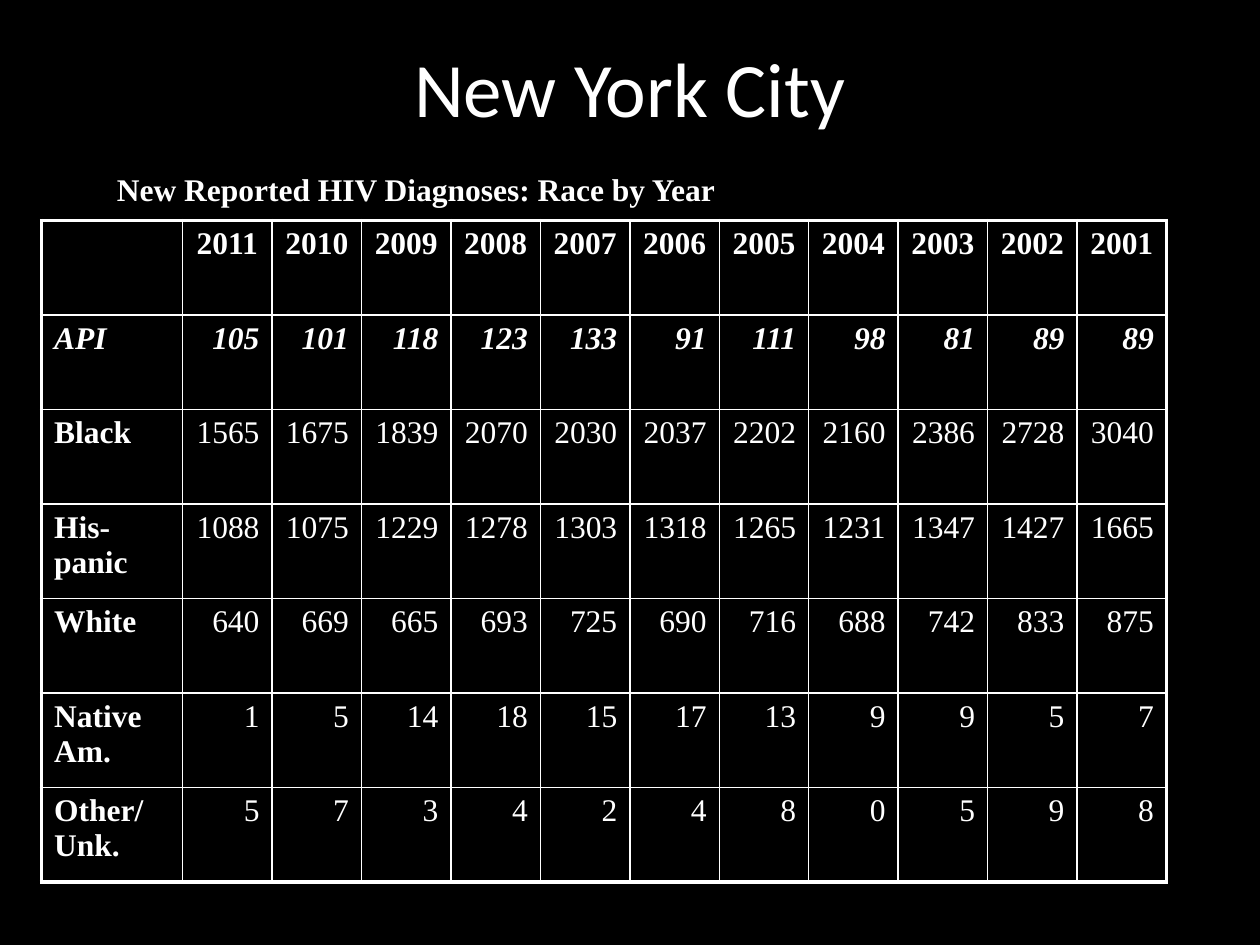
from dataclasses import dataclass

from lxml.etree import SubElement
from pptx import Presentation
from pptx.dml.color import RGBColor
from pptx.enum.text import MSO_ANCHOR as Anchor, PP_ALIGN as Align
from pptx.oxml.ns import qn
from pptx.util import Inches, Pt

WHITE, BLACK = "FFFFFF", "000000"
SERIF = "Times New Roman"
OUTER, INNER = 2.25, 1


@dataclass
class Style:
    font: str = SERIF
    size: float = 18
    bold: bool = False
    italic: bool = False
    align: Align = Align.LEFT


@dataclass
class Group:
    name: str
    diagnoses: list[int]
    emphasis: bool = False


YEARS = range(2011, 2000, -1)
GROUPS = [
    Group("API", [105, 101, 118, 123, 133, 91, 111, 98, 81, 89, 89], emphasis=True),
    Group("Black", [1565, 1675, 1839, 2070, 2030, 2037, 2202, 2160, 2386, 2728, 3040]),
    Group("His-panic", [1088, 1075, 1229, 1278, 1303, 1318, 1265, 1231, 1347, 1427, 1665]),
    Group("White", [640, 669, 665, 693, 725, 690, 716, 688, 742, 833, 875]),
    Group("Native Am.", [1, 5, 14, 18, 15, 17, 13, 9, 9, 5, 7]),
    Group("Other/ Unk.", [5, 7, 3, 4, 2, 4, 8, 0, 5, 9, 8]),
]


def paint(color, hex_code: str) -> None:
    color.rgb = RGBColor.from_string(hex_code)


def write(frame, text: str, style: Style) -> None:
    paragraph = frame.paragraphs[0]
    paragraph.alignment = style.align
    run = paragraph.add_run()
    run.text = text
    run.font.name = style.font
    run.font.size = Pt(style.size)
    run.font.bold = style.bold
    run.font.italic = style.italic
    paint(run.font.color, WHITE)


def add_text(slide, text: str, box: tuple, style: Style, anchor=Anchor.TOP) -> None:
    frame = slide.shapes.add_textbox(*map(Inches, box)).text_frame
    frame.word_wrap = True
    frame.vertical_anchor = anchor
    write(frame, text, style)


def set_borders(cell, widths: dict[str, float]) -> None:
    properties = cell._tc.get_or_add_tcPr()
    for side, width in widths.items():
        line = SubElement(properties, qn(f"a:ln{side}"), w=str(Pt(width)))
        fill = SubElement(line, qn("a:solidFill"))
        SubElement(fill, qn("a:srgbClr"), val=WHITE)


def add_diagnoses_table(slide) -> None:
    rows, columns = len(GROUPS) + 1, len(YEARS) + 1
    table = slide.shapes.add_table(
        rows, columns, Inches(0.33), Inches(1.75), Inches(8.92), Inches(5.25)
    ).table
    table.first_row = table.horz_banding = False
    for row in table.rows:
        row.height = Inches(0.75)
    for index, column in enumerate(table.columns):
        column.width = Inches(0.71 if index else 1.12)

    # Heavy frame, thin inner grid
    for r in range(rows):
        for c in range(columns):
            cell = table.cell(r, c)
            set_borders(cell, {
                "L": OUTER if c == 0 else INNER,
                "R": OUTER if c == columns - 1 else INNER,
                "T": OUTER if r == 0 else INNER,
                "B": OUTER if r == rows - 1 else INNER,
            })
            cell.fill.background()

    # Year headings
    heading = Style(bold=True, align=Align.CENTER)
    for c, year in enumerate(YEARS, 1):
        write(table.cell(0, c).text_frame, str(year), heading)

    # One row per group
    for r, group in enumerate(GROUPS, 1):
        label = Style(bold=True, italic=group.emphasis)
        count = Style(bold=group.emphasis, italic=group.emphasis, align=Align.RIGHT)
        write(table.cell(r, 0).text_frame, group.name, label)
        for c, value in enumerate(group.diagnoses, 1):
            write(table.cell(r, c).text_frame, str(value), count)


def main() -> None:
    deck = Presentation()
    deck.slide_width, deck.slide_height = Inches(10), Inches(7.5)
    slide = deck.slides.add_slide(deck.slide_layouts[6])
    slide.background.fill.solid()
    paint(slide.background.fill.fore_color, BLACK)

    # Title, table and its caption
    add_text(slide, "New York City", (0.75, 0.06, 8.5, 1.25),
             Style("Calibri", 44, align=Align.CENTER), Anchor.MIDDLE)
    add_diagnoses_table(slide)
    add_text(slide, "New Reported HIV Diagnoses: Race by Year",
             (0.83, 1.3, 7.92, 0.4), Style(bold=True))
    deck.save("out.pptx")


if __name__ == "__main__":
    main()
